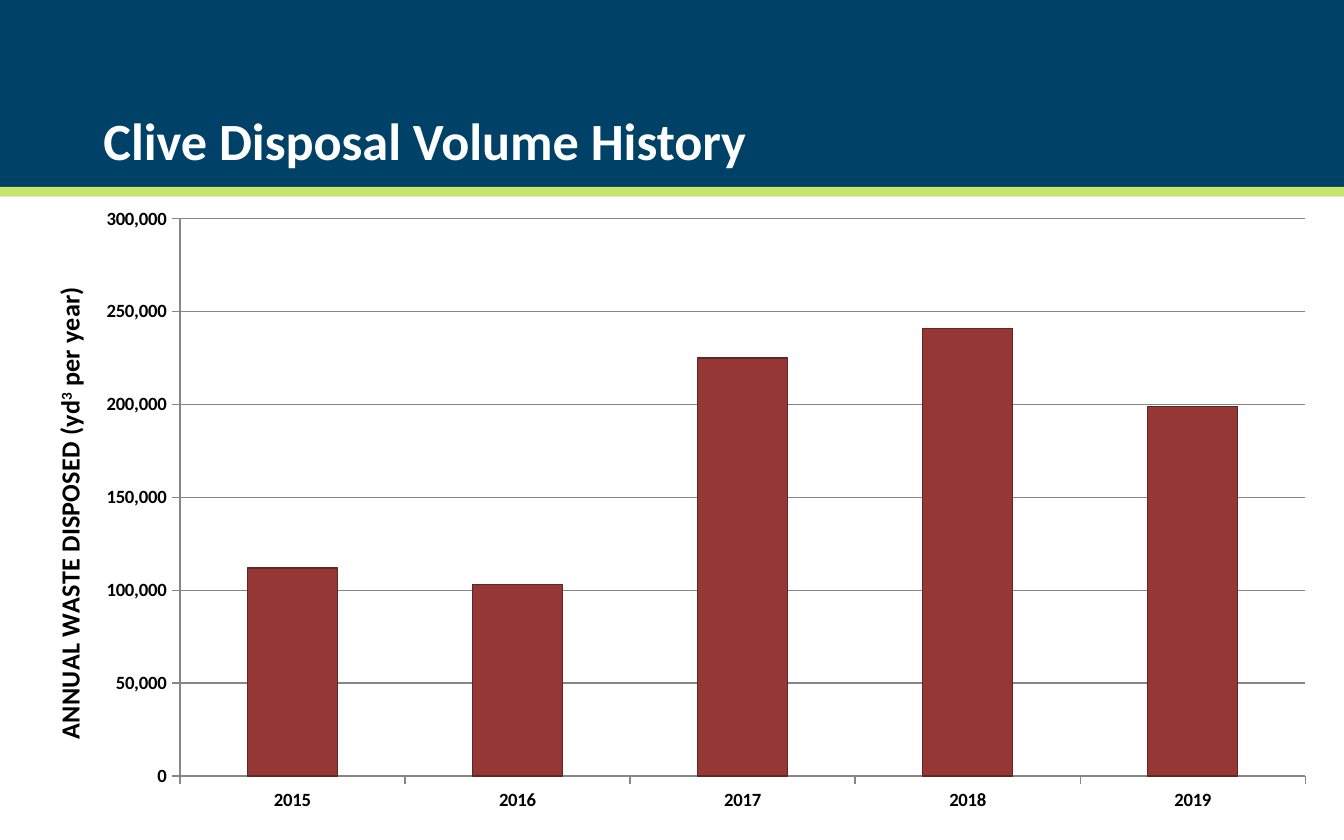
"""Build the Clive disposal volume slide: banner, title and column chart."""
from lxml.etree import SubElement
from pptx import Presentation
from pptx.chart.data import CategoryChartData
from pptx.dml.color import RGBColor
from pptx.enum.chart import XL_CHART_TYPE, XL_TICK_MARK
from pptx.enum.shapes import MSO_SHAPE
from pptx.enum.text import MSO_ANCHOR, MSO_AUTO_SIZE, PP_ALIGN
from pptx.oxml.ns import qn
from pptx.util import Inches, Pt

RECT = MSO_SHAPE.RECTANGLE
STACKED = XL_CHART_TYPE.COLUMN_STACKED
OUTSIDE = XL_TICK_MARK.OUTSIDE
BOTTOM = MSO_ANCHOR.BOTTOM
FIXED = MSO_AUTO_SIZE.NONE
LEFT = PP_ALIGN.LEFT
FONT, GRAY = "Calibri", "868686"


def style(font, size, color="000000", bold=True):
    font.name, font.size, font.bold = FONT, Pt(size), bold
    font.color.rgb = RGBColor.from_string(color)


def write(para, text, size, color="000000", raised=False):
    run = para.add_run()
    run.text = text
    style(run.font, size, color)
    if raised:
        run._r.get_or_add_rPr().set("baseline", "30000")


deck = Presentation()
deck.slide_width, deck.slide_height = Inches(10), Inches(6.25)
wide = deck.slide_width
slide = deck.slides.add_slide(deck.slide_layouts[5])
shapes = slide.shapes

for top, high, color in ((0, 1.46, "004168"), (1.39, 0.07, "C5E86C")):
    band = shapes.add_shape(RECT, 0, Inches(top), wide, Inches(high))
    band.shadow.inherit = False
    band.fill.solid()
    band.fill.fore_color.rgb = RGBColor.from_string(color)
    band.line.fill.background()

title = shapes.title
shapes._spTree.append(title._element)
title.left, title.top = Inches(0.67), Inches(0.49)
title.width, title.height = Inches(6.83), Inches(0.83)
frame = title.text_frame
frame.word_wrap, frame.auto_size = True, FIXED
frame.vertical_anchor = BOTTOM
head = frame.paragraphs[0]
head.alignment = LEFT
write(head, "Clive Disposal Volume History", 28, "FFFFFF")

data = CategoryChartData(number_format="#,##0")
data.categories = ["2015", "2016", "2017", "2018", "2019"]
data.add_series("Series 1", (112000, 103000, 225000, 241000, 199000))
place = [Inches(n) for n in (0.08, 1.46, 9.83, 4.67)]
chart = shapes.add_chart(STACKED, *place, data).chart
chart.has_legend = chart.has_title = False
style(chart.font, 10)
plot = chart.plots[0]
plot.gap_width, plot.overlap, plot.vary_by_categories = 150, 100, False
bars = plot.series[0].format
bars.fill.solid()
bars.fill.fore_color.rgb = RGBColor.from_string("953735")
bars.line.color.rgb = RGBColor.from_string("632523")
bars.line.width = Pt(0.75)

years, yards = chart.category_axis, chart.value_axis
yards.minimum_scale, yards.maximum_scale, yards.major_unit = 0, 300000, 50000
yards.has_major_gridlines = True
labels = yards.tick_labels
labels.number_format, labels.number_format_is_linked = "#,##0", False
for axis in (years, yards):
    axis.major_tick_mark = OUTSIDE
    style(axis.tick_labels.font, 10)
for part in (years, yards, yards.major_gridlines):
    part.format.line.color.rgb = RGBColor.from_string(GRAY)
    part.format.line.width = Pt(0.75)

label = yards.axis_title
frame = label.text_frame
body = frame._txBody.find(qn("a:bodyPr"))
body.set("rot", "-5400000")
body.set("vert", "horz")
for text, raised in (("ANNUAL WASTE DISPOSED (yd", False), ("3", True),
                     (" per year)", False)):
    write(frame.paragraphs[0], text, 14, raised=raised)

area = chart._chartSpace.chart.plotArea
for old in area.findall(qn("c:layout")):
    area.remove(old)
inner = SubElement(area, qn("c:layout"))
area.insert(0, inner)
outer = label._element.find(qn("c:layout"))
edges = {"xMode": "edge", "yMode": "edge"}
for spot, rules in (
        (inner, {"layoutTarget": "inner", **edges,
                 "x": 0.128, "y": 0.036, "w": 0.852, "h": 0.888}),
        (outer, {**edges, "x": 0.028, "y": 0.138})):
    manual = SubElement(spot, qn("c:manualLayout"))
    for key, value in rules.items():
        SubElement(manual, qn("c:" + key)).set("val", str(value))

deck.save("out.pptx")
